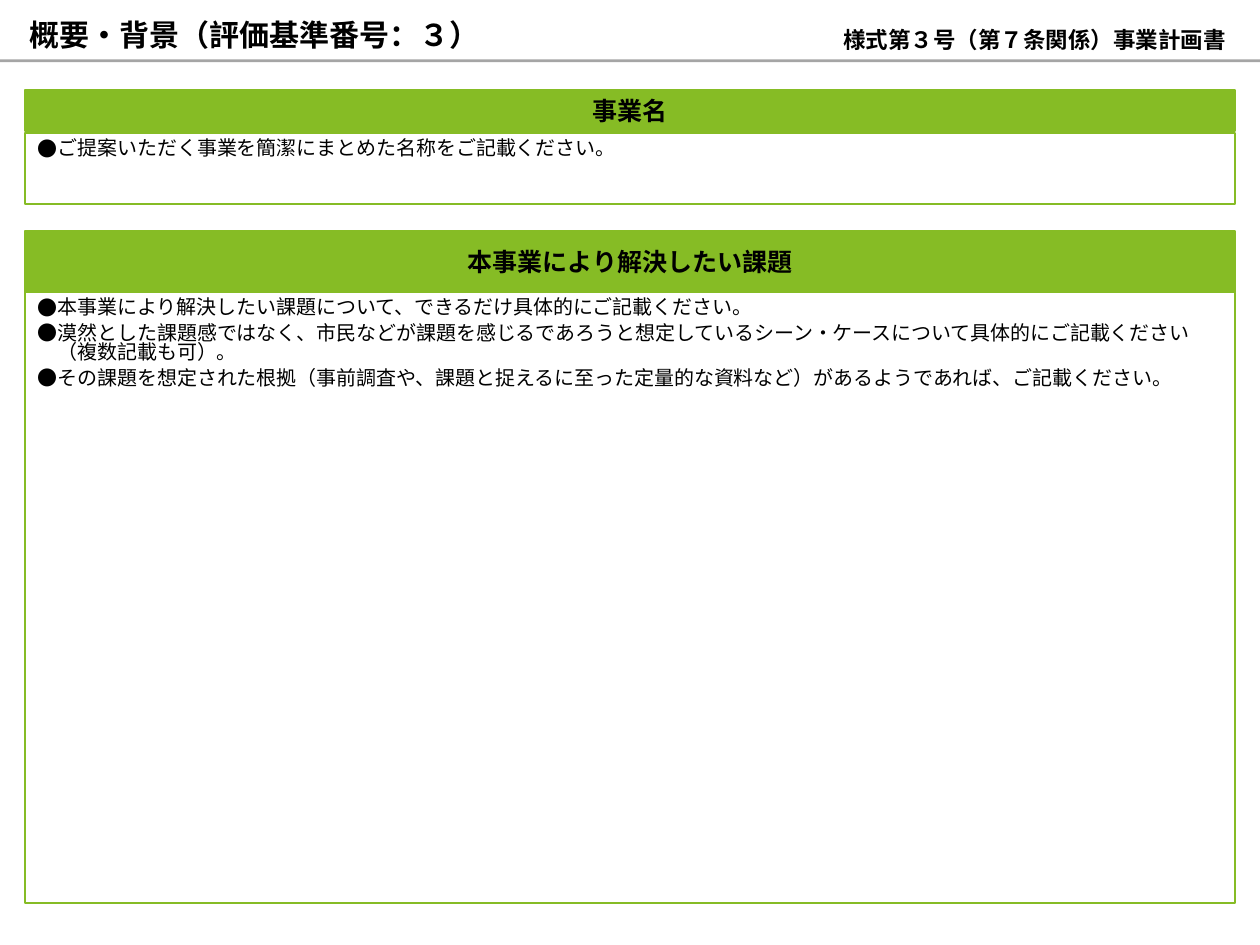
"""Builds the project plan slide on overview and background."""
import pptx
import pptx.util
import pptx.dml.color
import pptx.enum.shapes
import pptx.enum.text
import pptx.oxml.ns
import lxml.etree

WIDE, HIGH = 14, 10.5
EDGE = WIDE / 50
FACE = "Noto Sans CJK JP"
HUES = {"ink": "000000", "green": "86BC25", "rule": "A5A5A5", "paper": "FFFFFF"}
INCH = pptx.util.Inches
ALIGN = pptx.enum.text.PP_ALIGN
ANCHOR = pptx.enum.text.MSO_ANCHOR

PANELS = [
    (1, 0.46, 1.48, 0.79, "事業名", ["ご提案いただく事業を簡潔にまとめた名称をご記載ください。"]),
    (2.57, 0.68, 3.25, 6.78, "本事業により解決したい課題", [
        "本事業により解決したい課題について、できるだけ具体的にご記載ください。",
        "漠然とした課題感ではなく、市民などが課題を感じるであろうと想定しているシーン・ケースについて具体的にご記載ください（複数記載も可）。",
        "その課題を想定された根拠（事前調査や、課題と捉えるに至った定量的な資料など）があるようであれば、ご記載ください。",
    ]),
]


def hue(name):
    """Return the named colour."""
    return pptx.dml.color.RGBColor.from_string(HUES[name])


def assign(item, values):
    """Set each attribute from a dict of values."""
    for key, value in values.items():
        setattr(item, key, value)


def add_tag(parent, tag, **attrs):
    """Append a drawing element to a parent."""
    return lxml.etree.SubElement(parent, pptx.oxml.ns.qn(tag), **attrs)


def set_frame(frame, anchor, side=0, end=0, wrap=True):
    """Set the anchor, margins and wrap of a text frame."""
    assign(frame, {
        "vertical_anchor": anchor, "word_wrap": wrap,
        "margin_left": INCH(side), "margin_right": INCH(side),
        "margin_top": INCH(end), "margin_bottom": INCH(end),
    })


def write(para, text, size, bold=False, align=ALIGN.LEFT):
    """Write one styled run in a paragraph."""
    para.alignment = align
    run = para.add_run()
    run.text = text
    assign(run.font, {"size": pptx.util.Pt(size), "bold": bold, "name": FACE})
    run.font.color.rgb = hue("ink")
    add_tag(run.font._element, "a:ea", typeface=FACE)


def add_bar(slide, box, fill, line=None):
    """Add a flat rectangle."""
    kind = pptx.enum.shapes.MSO_SHAPE.RECTANGLE
    bar = slide.shapes.add_shape(kind, *map(INCH, box))
    bar.shadow.inherit = False
    bar.fill.solid()
    bar.fill.fore_color.rgb = hue(fill)
    if line:
        bar.line.color.rgb = hue(line)
        bar.line.width = pptx.util.Pt(1.5)
    else:
        bar.line.fill.background()
    return bar


def add_list(frame, items):
    """Fill a text frame with bulleted paragraphs."""
    for num, item in enumerate(items):
        para = frame.add_paragraph() if num else frame.paragraphs[0]
        para.line_spacing = 0.83
        if num:
            para.space_before = pptx.util.Pt(4.3)
        props = para._p.get_or_add_pPr()
        props.set("marL", str(INCH(0.22)))
        props.set("indent", str(INCH(-0.22)))
        add_tag(props, "a:buFont", typeface=FACE)
        add_tag(props, "a:buChar", char="●")
        write(para, item, 16)


def add_panel(slide, top, tall, start, depth, name, items):
    """Add a green heading bar over an outlined body."""
    span = WIDE - 2 * EDGE
    head = add_bar(slide, (EDGE, top, span, tall), "green", "green")
    set_frame(head.text_frame, ANCHOR.MIDDLE, 0.14, 0.07, False)
    write(head.text_frame.paragraphs[0], name, 20, True, ALIGN.CENTER)
    body = add_bar(slide, (EDGE, start, span, depth), "paper", "green")
    set_frame(body.text_frame, ANCHOR.TOP, 0.14, 0.07)
    add_list(body.text_frame, items)


def add_head(slide):
    """Place the title, the rule and the form label."""
    title = slide.shapes.title
    assign(title, dict(zip(("left", "top", "width", "height"),
                           map(INCH, (0.33, 0.21, 6.87, 0.37)))))
    set_frame(title.text_frame, ANCHOR.BOTTOM)
    write(title.text_frame.paragraphs[0], "概要・背景（評価基準番号：３）", 24, True)
    add_bar(slide, (0, 0.66, WIDE, 0.03), "rule")
    label = slide.shapes.add_textbox(*map(INCH, (9.19, 0.35, 4.61, 0.24)))
    set_frame(label.text_frame, ANCHOR.BOTTOM)
    write(label.text_frame.paragraphs[0], "様式第３号（第７条関係）事業計画書", 18, True, ALIGN.CENTER)


def main():
    """Build and save the slide."""
    deck = pptx.Presentation()
    assign(deck, {"slide_width": INCH(WIDE), "slide_height": INCH(HIGH)})
    slide = deck.slides.add_slide(deck.slide_layouts.get_by_name("Title Only"))
    add_head(slide)
    for panel in PANELS:
        add_panel(slide, *panel)
    deck.save("out.pptx")


if __name__ == "__main__":
    main()
